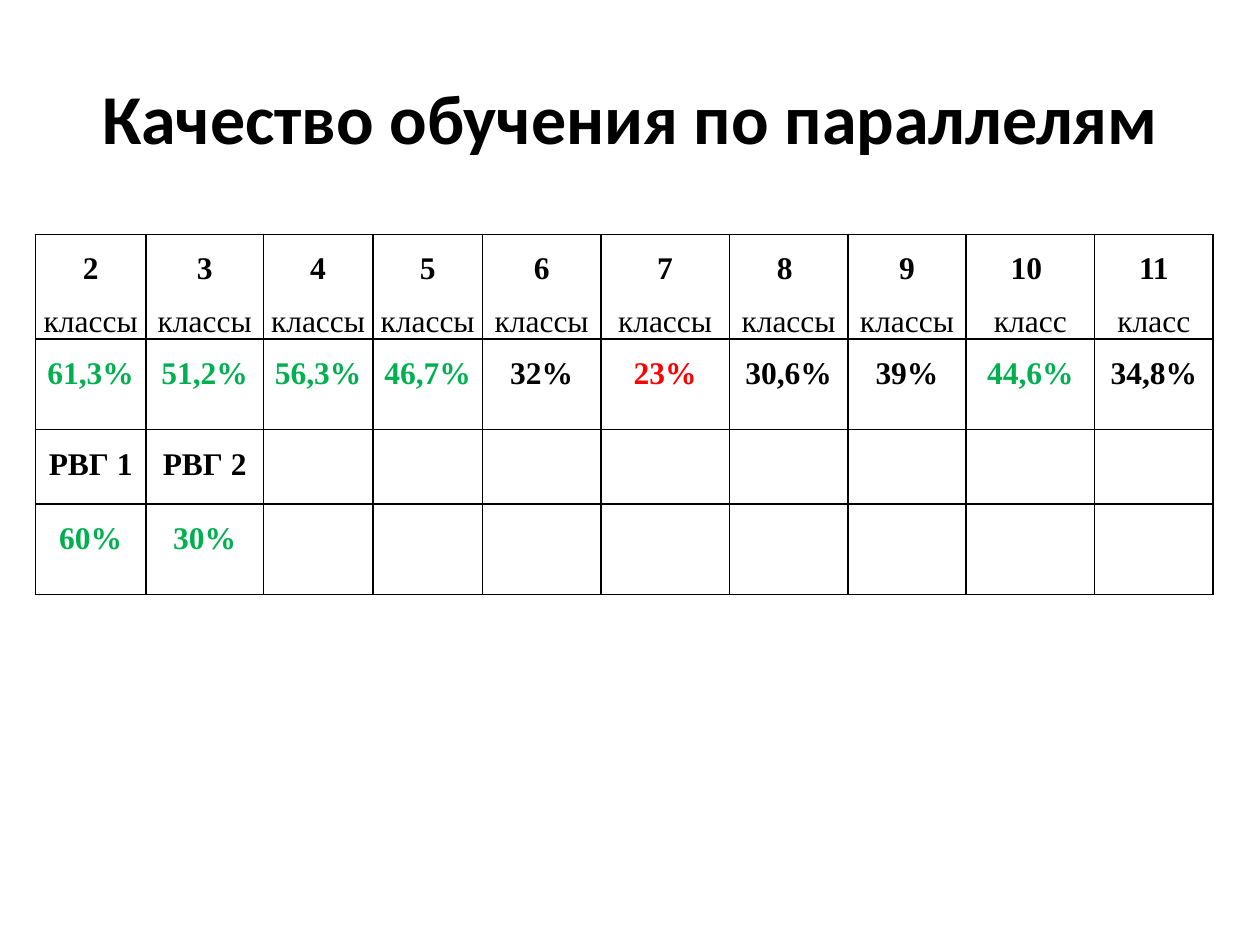
from dataclasses import dataclass

from lxml import etree
from pptx import Presentation
from pptx import util as u
from pptx.dml.color import RGBColor
from pptx.enum import text
from pptx.oxml import ns


@dataclass(frozen=True)
class Theme:
    """Colours, fonts and type sizes of the deck."""
    ink: str = "000000"
    good: str = "00B050"
    poor: str = "FF0000"
    paper: str = "FFFFFF"
    title_font: str = "Calibri"
    table_font: str = "Times New Roman"
    title_size: int = 40
    table_size: int = 18
    border: float = 1


THEME = Theme()
TITLE = "Качество обучения по параллелям"
COLUMN_WIDTHS = [0.88, 0.93, 0.87, 0.87, 0.94, 1.02, 0.94, 0.94, 1.02, 0.94]
ROW_HEIGHTS = [0.72, 0.72, 0.59, 0.72]
GRADES = [
    [("2", " классы")], [("3", " классы")], [("4 ", "классы")],
    [("5", ""), ("", "классы")], [("6", " классы")], [("7", " классы")],
    [("8 ", ""), ("", "классы")], [("9", " классы")],
    [("10 ", ""), ("", "класс")], [("11", " класс")],
]
QUALITY = [
    ("61,3%", THEME.good), ("51,2%", THEME.good), ("56,3%", THEME.good),
    ("46,7%", THEME.good), ("32%", THEME.ink), ("23%", THEME.poor),
    ("30,6%", THEME.ink), ("39%", THEME.ink), ("44,6%", THEME.good),
    ("34,8%", THEME.ink),
]
GROUPS = [("РВГ 1", THEME.ink), ("РВГ 2", THEME.ink)]
GROUP_QUALITY = [("60%", THEME.good), ("30%", THEME.good)]


def add_span(para, words, font, size, colour, bold):
    """Append one formatted run to a paragraph."""
    span = para.add_run()
    span.text = words
    span.font.name = font
    span.font.size = u.Pt(size)
    span.font.bold = bold
    span.font.color.rgb = RGBColor.from_string(colour)


def place_title(page, box):
    """Move the title placeholder to its box and fill it."""
    title = page.shapes.title
    title.left, title.top, title.width, title.height = map(u.Inches, box)
    frame = title.text_frame
    frame.word_wrap = True
    frame.vertical_anchor = text.MSO_ANCHOR.MIDDLE
    para = frame.paragraphs[0]
    para.alignment = text.PP_ALIGN.CENTER
    add_span(para, TITLE, THEME.title_font, THEME.title_size, THEME.ink, True)


def format_cell(cell):
    """Give a cell a plain fill and a thin border on all four sides."""
    cell.fill.solid()
    cell.fill.fore_color.rgb = RGBColor.from_string(THEME.paper)
    properties = cell._tc.get_or_add_tcPr()
    for position, side in enumerate(("lnL", "lnR", "lnT", "lnB")):
        line = etree.Element(ns.qn(f"a:{side}"), w=str(u.Pt(THEME.border)))
        fill = etree.SubElement(line, ns.qn("a:solidFill"))
        etree.SubElement(fill, ns.qn("a:srgbClr"), val=THEME.ink)
        properties.insert(position, line)


def write_cell(cell, paragraphs):
    """Write paragraphs of (words, colour, bold) spans into a cell."""
    cell.margin_left = cell.margin_right = u.Inches(0.05)
    cell.margin_top = cell.margin_bottom = 0
    frame = cell.text_frame
    for index, spans in enumerate(paragraphs):
        para = frame.add_paragraph() if index else frame.paragraphs[0]
        para.alignment = text.PP_ALIGN.CENTER
        para.line_spacing = 1.5
        for words, colour, bold in spans:
            if words:
                add_span(para, words, THEME.table_font, THEME.table_size, colour, bold)


def place_table(page, box):
    """Build the table of results by grade and by group."""
    table = page.shapes.add_table(
        len(ROW_HEIGHTS), len(COLUMN_WIDTHS), *map(u.Inches, box)).table
    table.first_row = table.horz_banding = False
    for column, width in zip(table.columns, COLUMN_WIDTHS):
        column.width = u.Inches(width)
    for row, height in zip(table.rows, ROW_HEIGHTS):
        row.height = u.Inches(height)
    for cell in table.iter_cells():
        format_cell(cell)
    for column, lines in enumerate(GRADES):
        write_cell(table.cell(0, column), [
            [(number, THEME.ink, True), (noun, THEME.ink, False)]
            for number, noun in lines])
    for row, values in enumerate((QUALITY, GROUPS, GROUP_QUALITY), start=1):
        for column, (words, colour) in enumerate(values):
            write_cell(table.cell(row, column), [[(words, colour, True)]])


def main():
    """Build the deck and save it."""
    deck = Presentation()
    deck.slide_width, deck.slide_height = u.Inches(10), u.Inches(7.5)
    page = deck.slides.add_slide(deck.slide_layouts.get_by_name("Title Only"))
    place_title(page, (0.5, 0.3, 9, 1.25))
    place_table(page, (0.28, 1.86, sum(COLUMN_WIDTHS), sum(ROW_HEIGHTS)))
    deck.save("out.pptx")


if __name__ == "__main__":
    main()
